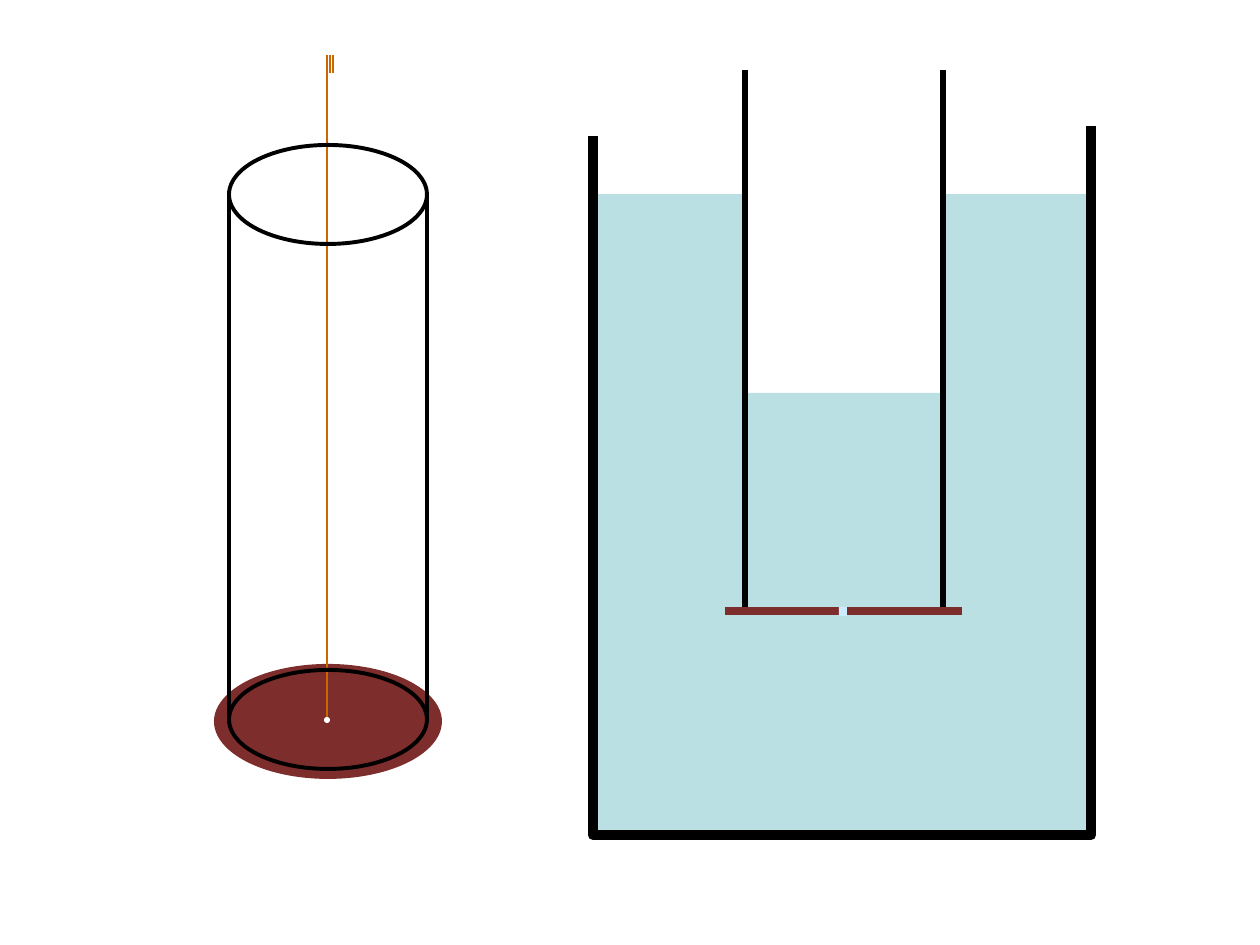
from lxml.etree import SubElement
from pptx import Presentation
from pptx.dml.color import RGBColor
from pptx.enum.shapes import MSO_CONNECTOR, MSO_SHAPE
from pptx.oxml.ns import qn
from pptx.util import Pt

PX = 914400 / 126
COLOR = {"disk": "7D2D2B", "cord": "CC6600", "wall": "000000",
         "water": "BBE0E3", "air": "FFFFFF", "gap": "CCECFF"}

deck = Presentation()
deck.slide_width, deck.slide_height = round(1260 * PX), round(945 * PX)
slide = deck.slides.add_slide(deck.slide_layouts[6])


def add_shape(kind, box, fill=None, line=None, width=2.25):
    shape = slide.shapes.add_shape(kind, *[round(n * PX) for n in box])
    shape.shadow.inherit = False
    if fill:
        shape.fill.solid()
        shape.fill.fore_color.rgb = RGBColor.from_string(COLOR[fill])
    else:
        shape.fill.background()
    if line:
        shape.line.color.rgb = RGBColor.from_string(COLOR[line])
        shape.line.width = Pt(width)
    else:
        shape.line.fill.background()


def add_line(x1, y1, x2, y2, color, width):
    ends = [round(n * PX) for n in (x1, y1, x2, y2)]
    line = slide.shapes.add_connector(MSO_CONNECTOR.STRAIGHT, *ends)
    line.line.color.rgb = RGBColor.from_string(COLOR[color])
    line.line.width = Pt(width)
    SubElement(line._element.spPr, qn("a:effectLst"))


# Glass tube with a disk held by a cord
left, wide, high = 229, 198, 99
top, base = 145, 670
add_shape(MSO_SHAPE.OVAL, (214, 664, 228, 115), fill="disk")
for x, y in ((327, 720), (330, 73), (333, 73)):
    add_line(x, y, x, 55, "cord", 1.5)
for y in (base, top):
    add_shape(MSO_SHAPE.OVAL, (left, y, wide, high), line="wall")
for x in (left, left + wide):
    add_line(x, top + high / 2, x, base + high / 2, "wall", 2.25)
add_shape(MSO_SHAPE.OVAL, (324, 717, 6, 6), fill="air")

# Water outside and inside the tube
tube, floor = 745, 611
add_shape(MSO_SHAPE.RECTANGLE, (596, 194, 496, 638), fill="water")
add_shape(MSO_SHAPE.RECTANGLE, (tube, 145, wide, 466), fill="air")
add_shape(MSO_SHAPE.RECTANGLE, (tube, 393, wide, 441), fill="water")
for x in (tube, tube + wide):
    add_line(x, 70, x, floor, "wall", 3)

# Open vessel
path = slide.shapes.build_freeform(593, 136, scale=PX)
path.add_line_segments([(593, 835), (1091, 835), (1091, 126)], close=False)
vessel = path.convert_to_shape()
vessel.shadow.inherit = False
vessel.fill.background()
vessel.line.color.rgb = RGBColor.from_string(COLOR["wall"])
vessel.line.width = Pt(6)
SubElement(vessel.line._get_or_add_ln(), qn("a:round"))

# Disk seen from the side, with its hole
add_line(725, floor, 962, floor, "disk", 4.5)
add_shape(MSO_SHAPE.RECTANGLE, (839, 607, 8, 9), fill="gap")

deck.save("out.pptx")
